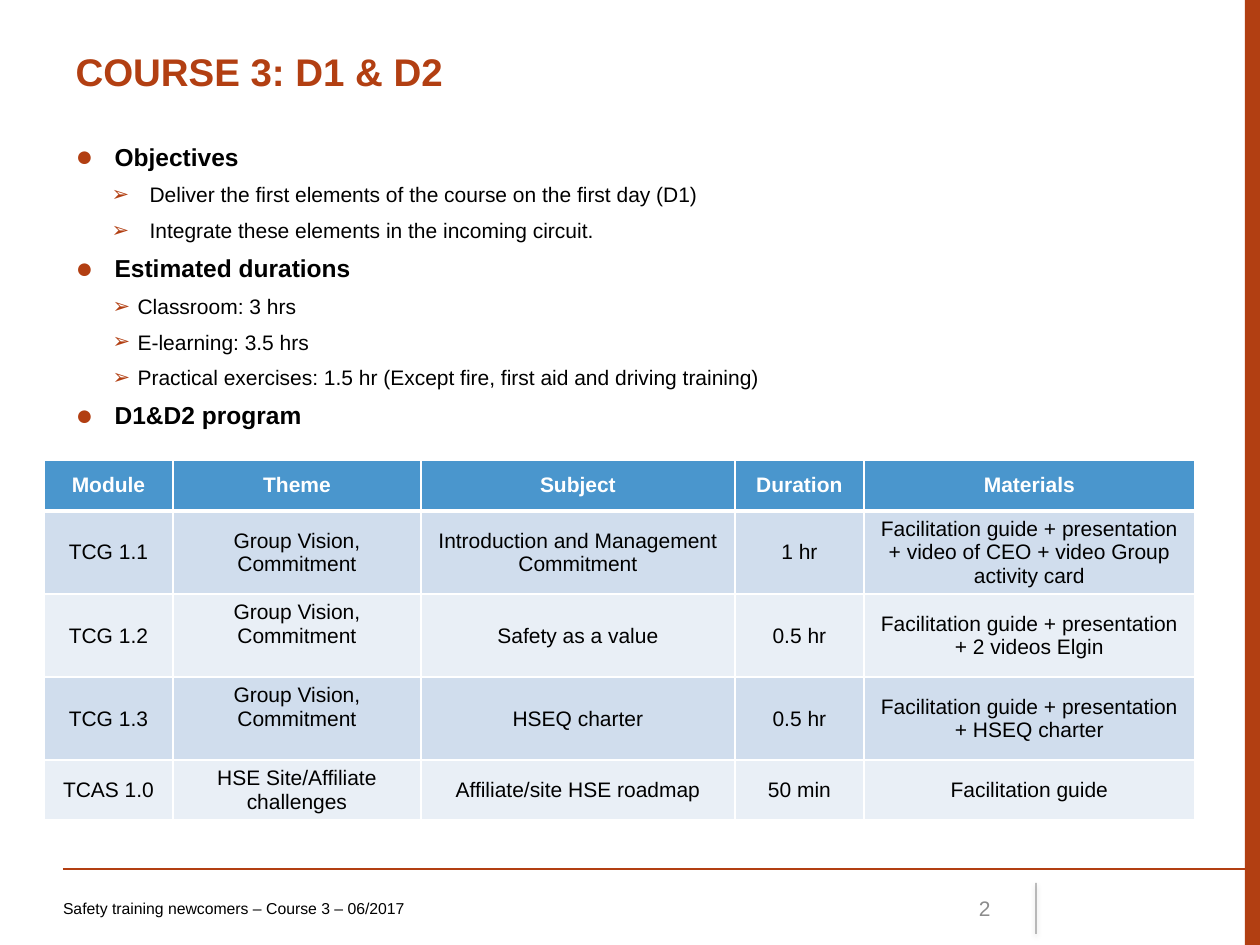
from lxml.etree import SubElement
from pptx import Presentation
from pptx.dml.color import RGBColor
from pptx.enum.shapes import MSO_CONNECTOR, MSO_SHAPE
from pptx.enum.text import MSO_ANCHOR, MSO_AUTO_SIZE, PP_ALIGN
from pptx.oxml.ns import qn
from pptx.util import Emu, Pt

PX = 914400 // 126
RUST, BLACK, WHITE, GREY = "B23F12", "000000", "FFFFFF", "8C8C8C"
HEADER_BLUE, BAND_DARK, BAND_LIGHT = "4A96CD", "D0DDED", "E9EFF6"

# Each section: heading, text indent and hanging of its points, points
SECTIONS = [
    ("Objectives", 74, 38, [
        "Deliver the first elements of the course on the first day (D1)",
        "Integrate these elements in the incoming circuit.",
    ]),
    ("Estimated durations", 62, 25, [
        "Classroom: 3 hrs",
        "E-learning: 3.5 hrs",
        "Practical exercises: 1.5 hr (Except fire, first aid and driving training)",
    ]),
    ("D1&D2 program", 0, 0, []),
]

COLUMN_WIDTHS = [129, 248, 314, 129, 331]
ROW_HEIGHTS = [51, 83, 83, 83, 60]
VISION = "Group Vision,\nCommitment"
PROGRAM = [
    ["Module", "Theme", "Subject", "Duration", "Materials"],
    ["TCG 1.1", VISION, "Introduction and Management Commitment", "1 hr",
     "Facilitation guide + presentation + video of CEO + video Group activity card"],
    ["TCG 1.2", VISION, "Safety as a value", "0.5 hr",
     "Facilitation guide + presentation + 2 videos Elgin"],
    ["TCG 1.3", VISION, "HSEQ charter", "0.5 hr",
     "Facilitation guide + presentation + HSEQ charter"],
    ["TCAS 1.0", "HSE Site/Affiliate challenges", "Affiliate/site HSE roadmap",
     "50 min", "Facilitation guide"],
]
RAISED_CELLS = [(2, 1), (3, 1)]


def px(length):
    return Emu(length * PX)


def color(hex_value):
    return RGBColor.from_string(hex_value)


def add_run(paragraph, text, size, hex_value, bold=False):
    run = paragraph.add_run()
    run.text = text
    run.font.name = "Arial"
    run.font.size = Pt(size)
    run.font.bold = bold
    run.font.color.rgb = color(hex_value)


def place(shape, left, top, width, height):
    shape.left, shape.top = px(left), px(top)
    shape.width, shape.height = px(width), px(height)


def add_hex(parent, hex_value, alpha=None):
    """Append an sRGB colour element, with opacity in percent if given."""
    rgb = SubElement(parent, qn("a:srgbClr"), val=hex_value)
    if alpha:
        SubElement(rgb, qn("a:alpha"), val=str(alpha * 1000))


def add_bullet(paragraph, char, indent, hanging, size_percent=100):
    props = paragraph._p.get_or_add_pPr()
    props.set("marL", str(px(indent)))
    props.set("indent", str(px(-hanging)))
    add_hex(SubElement(props, qn("a:buClr")), RUST)
    SubElement(props, qn("a:buSzPct"), val=str(size_percent * 1000))
    SubElement(props, qn("a:buFont"), typeface="Arial")
    SubElement(props, qn("a:buChar"), char=char)


def add_line(slide, start, end, hex_value, weight):
    """Draw a straight line and return it with its effect list."""
    line = slide.shapes.add_connector(
        MSO_CONNECTOR.STRAIGHT, *map(px, start), *map(px, end))
    line.line.color.rgb = color(hex_value)
    line.line.width = Pt(weight)
    effects = SubElement(line._element.spPr, qn("a:effectLst"))
    return line, effects


def add_footer_text(slide, box, text, size, hex_value, align, left_margin):
    footer = slide.shapes.add_textbox(*map(px, box))
    frame = footer.text_frame
    frame.word_wrap = True
    frame.vertical_anchor = MSO_ANCHOR.MIDDLE
    frame.margin_left = px(left_margin)
    paragraph = frame.paragraphs[0]
    paragraph.alignment = align
    add_run(paragraph, text, size, hex_value)


def add_frame(slide):
    """Draw the side band and the footer rules."""
    band = slide.shapes.add_shape(
        MSO_SHAPE.RECTANGLE, px(1245), 0, px(15), px(945))
    band.shadow.inherit = False
    band.fill.solid()
    band.fill.fore_color.rgb = color(RUST)
    band.line.fill.background()

    add_line(slide, (63, 869), (1260, 869), RUST, 0.75)
    divider, effects = add_line(slide, (1036, 883), (1036, 934), BLACK, 0.5)
    rgb = divider.line._ln.find(".//" + qn("a:srgbClr"))
    SubElement(rgb, qn("a:alpha"), val="70000")
    shadow = SubElement(effects, qn("a:outerShdw"), blurRad=str(Pt(3.1)),
                        dist=str(Pt(1.6)), dir="5400000", rotWithShape="0")
    add_hex(shadow, BLACK, 38)


def fill_title(title, text):
    place(title, 63, 38, 1133, 87)
    frame = title.text_frame
    frame.auto_size = MSO_AUTO_SIZE.NONE
    frame.vertical_anchor = MSO_ANCHOR.TOP
    frame.margin_top = px(10)
    paragraph = frame.paragraphs[0]
    paragraph.alignment = PP_ALIGN.LEFT
    add_run(paragraph, text, 22, RUST, bold=True)


def fill_outline(body):
    place(body, 63, 132, 1133, 290)
    frame = body.text_frame
    frame.auto_size = MSO_AUTO_SIZE.NONE
    frame.margin_top = px(10)

    def next_paragraph(level):
        first = not frame.paragraphs[0].runs
        paragraph = frame.paragraphs[0] if first else frame.add_paragraph()
        paragraph.level = level
        paragraph.space_before = Pt(0 if first else 3)
        paragraph.space_after = Pt(3)
        return paragraph

    for heading, indent, hanging, points in SECTIONS:
        paragraph = next_paragraph(0)
        add_bullet(paragraph, "●", 39, 39, 120)
        add_run(paragraph, heading, 14, BLACK, bold=True)
        for point in points:
            paragraph = next_paragraph(1)
            add_bullet(paragraph, "➢", indent, hanging)
            add_run(paragraph, point, 12, BLACK)


def style_cell(cell, fill, top, bottom):
    """Give a cell white borders, then its fill."""
    props = cell._tc.get_or_add_tcPr()
    for side, weight in (("L", 1), ("R", 1), ("T", top), ("B", bottom)):
        border = SubElement(props, qn(f"a:ln{side}"), w=str(Pt(weight)))
        add_hex(SubElement(border, qn("a:solidFill")), WHITE)
    cell.fill.solid()
    cell.fill.fore_color.rgb = color(fill)
    cell.vertical_anchor = MSO_ANCHOR.MIDDLE


def add_program_table(slide):
    table = slide.shapes.add_table(
        len(PROGRAM), len(COLUMN_WIDTHS), px(44), px(460),
        px(sum(COLUMN_WIDTHS)), px(sum(ROW_HEIGHTS))).table
    table.horz_banding = False
    for column, width in zip(table.columns, COLUMN_WIDTHS):
        column.width = px(width)
    for row, height in zip(table.rows, ROW_HEIGHTS):
        row.height = px(height)
    for r, entries in enumerate(PROGRAM):
        header = r == 0
        fill = HEADER_BLUE if header else (BAND_LIGHT, BAND_DARK)[r % 2]
        for c, entry in enumerate(entries):
            cell = table.cell(r, c)
            style_cell(cell, fill, 3 if r == 1 else 1, 3 if header else 1)
            if (r, c) in RAISED_CELLS:
                cell.margin_bottom = px(29)
            frame = cell.text_frame
            for i, text in enumerate(entry.split("\n")):
                paragraph = frame.add_paragraph() if i else frame.paragraphs[0]
                paragraph.alignment = PP_ALIGN.CENTER
                add_run(paragraph, text, 12, WHITE if header else BLACK, header)


def main():
    prs = Presentation()
    prs.slide_width, prs.slide_height = px(1260), px(945)
    slide = prs.slides.add_slide(prs.slide_layouts[1])
    add_frame(slide)
    fill_title(slide.shapes.title, "COURSE 3: D1 & D2")
    fill_outline(slide.placeholders[1])
    add_program_table(slide)
    add_footer_text(slide, (903, 883, 100, 51), "2", 12, GREY, PP_ALIGN.RIGHT, 13)
    add_footer_text(slide, (63, 883, 766, 51),
                    "Safety training newcomers – Course 3 – 06/2017",
                    9, BLACK, PP_ALIGN.LEFT, 0)
    prs.save("out.pptx")


if __name__ == "__main__":
    main()
